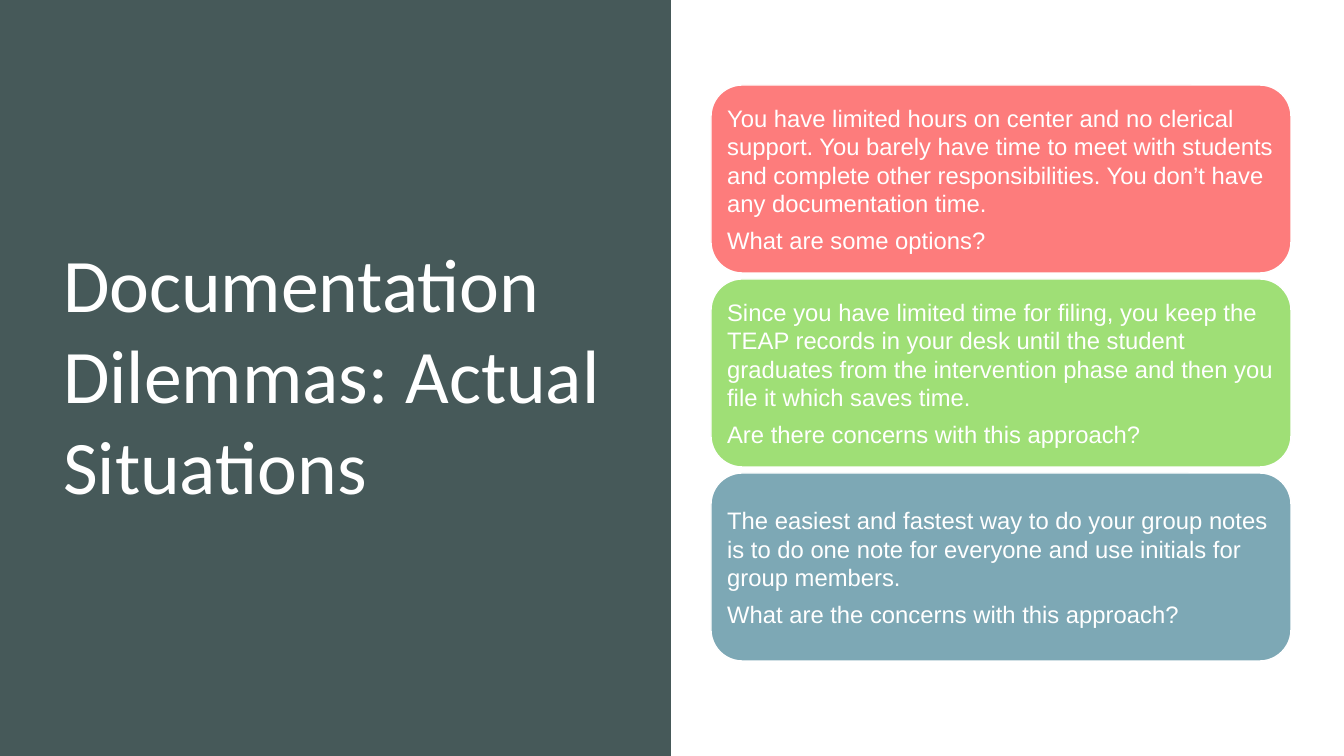
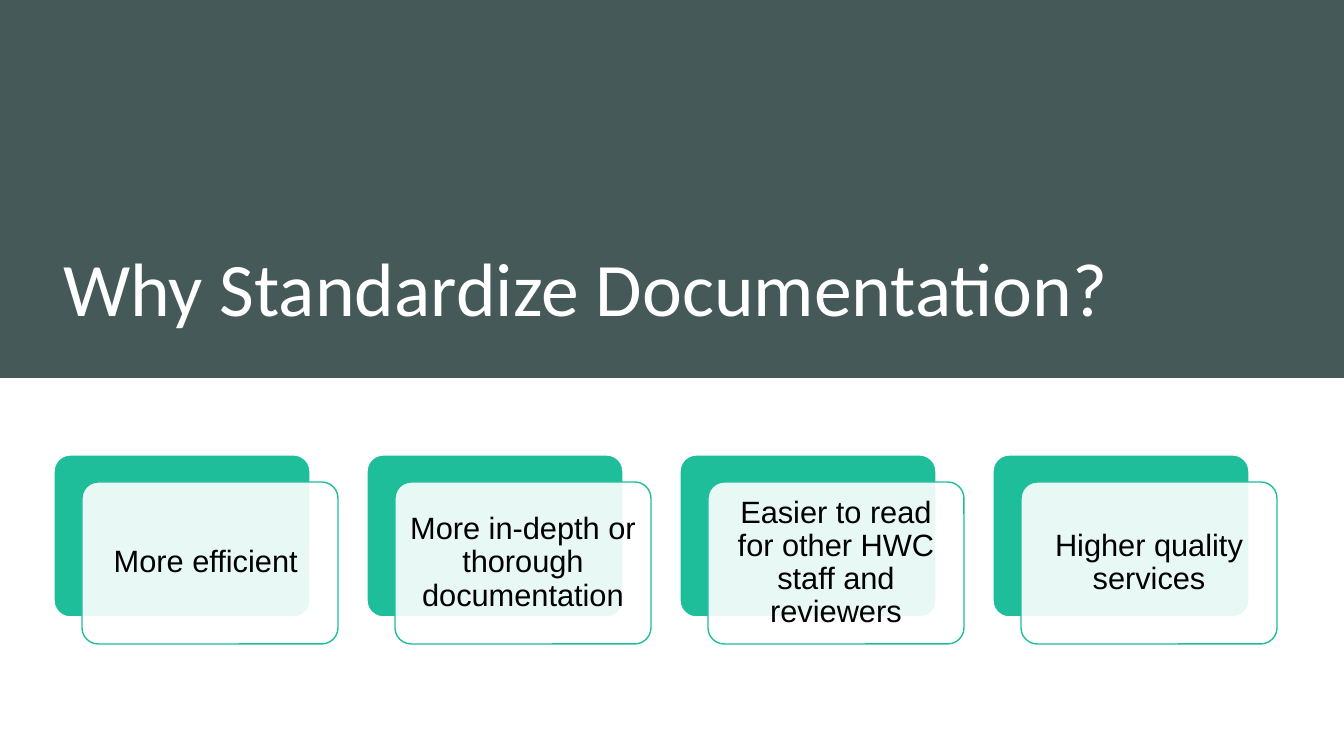
from lxml import etree
from pptx import Presentation
from pptx.dml.color import RGBColor
from pptx.enum.shapes import MSO_SHAPE
from pptx.enum.text import MSO_ANCHOR, PP_ALIGN
from pptx.oxml.ns import qn
from pptx.util import Emu, Pt

SLATE = RGBColor(0x46, 0x59, 0x59)
WHITE = RGBColor(0xFF, 0xFF, 0xFF)
BLACK = RGBColor(0x00, 0x00, 0x00)
CORAL = RGBColor(0xFD, 0x7C, 0x7C)
GREEN = RGBColor(0x9F, 0xDF, 0x76)
BLUE = RGBColor(0x7D, 0xA8, 0xB5)
TEAL = RGBColor(0x1E, 0xBE, 0x9B)

RECTANGLE = MSO_SHAPE.RECTANGLE
ROUNDED = MSO_SHAPE.ROUNDED_RECTANGLE
MIDDLE = MSO_ANCHOR.MIDDLE
BOTTOM = MSO_ANCHOR.BOTTOM
LEFT = PP_ALIGN.LEFT
CENTER = PP_ALIGN.CENTER

SLIDE_WIDTH, SLIDE_HEIGHT = 1344, 756
EMU_PER_PX = 914400 / 100.8

SITUATIONS = [
    (CORAL, [
        "You have limited hours on center and no clerical support. You barely have time "
        "to meet with students and complete other responsibilities. You don’t have any "
        "documentation time.",
        "What are some options?",
    ]),
    (GREEN, [
        "Since you have limited time for filing, you keep the TEAP records in your desk "
        "until the student graduates from the intervention phase and then you file it "
        "which saves time.",
        "Are there concerns with this approach?",
    ]),
    (BLUE, [
        "The easiest and fastest way to do your group notes is to do one note for "
        "everyone and use initials for group members.",
        "What are the concerns with this approach?",
    ]),
]

REASONS = [
    "More efficient ",
    "More in-depth or thorough documentation",
    "Easier to read for other HWC staff and reviewers",
    "Higher quality services",
]


def px(length):
    return Emu(round(length * EMU_PER_PX))


def write_text(shape, paragraphs, *, size, color, font="Arial", align=LEFT,
               anchor=MIDDLE, inset=7, line_spacing=1.0, gap=0):
    frame = shape.text_frame
    frame.word_wrap = True
    frame.vertical_anchor = anchor
    frame.margin_left = frame.margin_right = px(inset)
    frame.margin_top = frame.margin_bottom = px(inset)
    for index, text in enumerate(paragraphs):
        paragraph = frame.add_paragraph() if index else frame.paragraphs[0]
        paragraph.alignment = align
        paragraph.line_spacing = line_spacing
        if index:
            paragraph.space_before = Pt(gap)
        run = paragraph.add_run()
        run.text = text
        run.font.name = font
        run.font.size = Pt(size)
        run.font.color.rgb = color


class Deck:
    def __init__(self):
        self.presentation = Presentation()
        self.presentation.slide_width = px(SLIDE_WIDTH)
        self.presentation.slide_height = px(SLIDE_HEIGHT)
        self.slide = None

    def new_slide(self):
        self.slide = self.presentation.slides.add_slide(self.presentation.slide_layouts[6])

    def panel(self, kind, left, top, width, height, fill, line=None, corner=None, opacity=100):
        shape = self.slide.shapes.add_shape(kind, px(left), px(top), px(width), px(height))
        shape.shadow.inherit = False
        shape.fill.solid()
        shape.fill.fore_color.rgb = fill
        if line is None:
            shape.line.fill.background()
        else:
            shape.line.color.rgb = line
            shape.line.width = Pt(1)
        if corner is not None:
            shape.adjustments[0] = corner
        if opacity < 100:
            color = shape.fill._xPr.find(qn("a:solidFill"))[0]
            etree.SubElement(color, qn("a:alpha")).set("val", str(opacity * 1000))
        return shape

    def band(self, width, height):
        self.panel(RECTANGLE, 0, 0, width, height, SLATE)

    def title(self, text, left, top, width, height, anchor):
        box = self.slide.shapes.add_textbox(px(left), px(top), px(width), px(height))
        write_text(box, [text], size=54, color=WHITE, font="Calibri", anchor=anchor, inset=10)

    def situation(self, left, top, fill, paragraphs):
        shape = self.panel(ROUNDED, left, top, 580, 188, fill, line=WHITE)
        write_text(shape, paragraphs, size=17, color=WHITE, gap=6)

    def reason(self, left, top, text):
        width, height, corner = 256, 162, 0.1
        self.panel(ROUNDED, left, top, width, height, TEAL, line=WHITE, corner=corner)
        card = self.panel(ROUNDED, left + 28, top + 27, width, height, WHITE,
                          line=TEAL, corner=corner, opacity=90)
        write_text(card, [text], size=22, color=BLACK, align=CENTER, inset=9, line_spacing=0.9)


def main():
    deck = Deck()

    deck.new_slide()
    deck.band(671, SLIDE_HEIGHT)
    deck.title("Documentation Dilemmas: Actual Situations", 53, 53, 560, 641, MIDDLE)
    for row, (fill, paragraphs) in enumerate(SITUATIONS):
        deck.situation(711, 85 + row * 194, fill, paragraphs)

    deck.new_slide()
    deck.band(SLIDE_WIDTH, 378)
    deck.title("Why Standardize Documentation?", 53, 40, 1199, 302, BOTTOM)
    for column, text in enumerate(REASONS):
        deck.reason(54 + column * 313, 455, text)

    deck.presentation.save("out.pptx")


if __name__ == "__main__":
    main()
